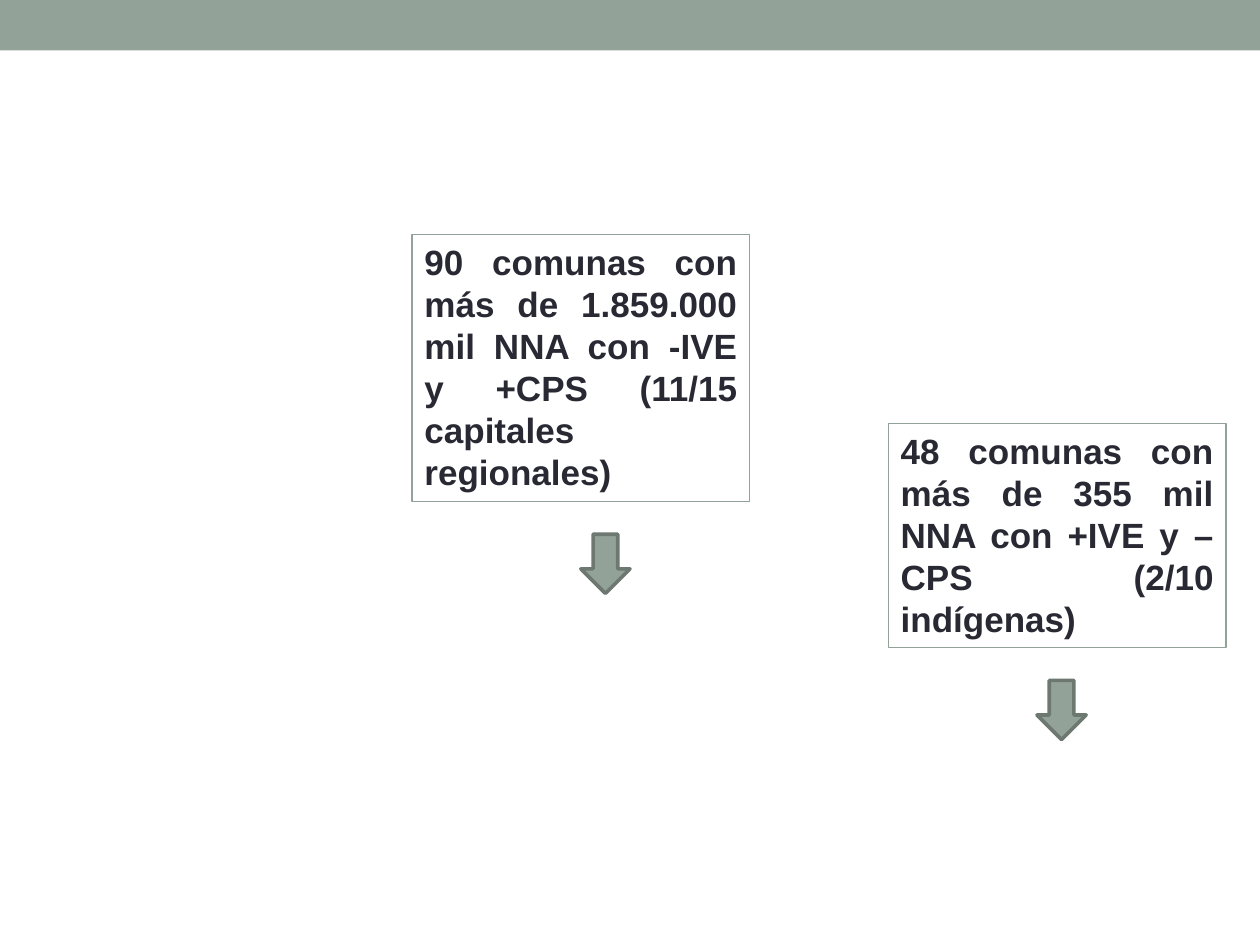
from pptx import Presentation
from pptx.dml.color import RGBColor
from pptx.enum.shapes import MSO_SHAPE
from pptx.enum.text import MSO_ANCHOR, MSO_AUTO_SIZE, PP_ALIGN
from pptx.util import Inches, Pt

SAGE, EDGE, INK = "93A299", "6D7871", "292934"
FRAME = {"word_wrap": True, "auto_size": MSO_AUTO_SIZE.SHAPE_TO_FIT_TEXT,
         "vertical_anchor": MSO_ANCHOR.TOP}
FONT = {"name": "Arial", "size": Pt(20), "bold": True}
NOTES = [
    ((7.05, 3.36, 2.68, 1.78), 1.18,
     "48 comunas con más de 355 mil NNA con +IVE y –CPS (2/10 indígenas)"),
    ((3.27, 1.86, 2.68, 2.12), 1.34,
     "90 comunas con más de 1.859.000 mil NNA con -IVE y +CPS "
     "(11/15 capitales regionales)"),
]


def paint(target, color):
    target.rgb = RGBColor.from_string(color)


def style(target, values):
    for name, value in values.items():
        setattr(target, name, value)


def draw(slide, kind, box, fill=None, line=None, width=0):
    shape = slide.shapes.add_shape(kind, *map(Inches, box))
    shape.shadow.inherit = False
    if fill:
        shape.fill.solid()
        paint(shape.fill.fore_color, fill)
    else:
        shape.fill.background()
    if line:
        paint(shape.line.color, line)
        shape.line.width = Pt(width)
    else:
        shape.line.fill.background()
    return shape


def add_band(slide, box):
    draw(slide, MSO_SHAPE.RECTANGLE, box, SAGE)


def add_note(slide, box, shift, text):
    left, top, width, height = box
    frame = draw(slide, MSO_SHAPE.RECTANGLE, box, line=SAGE, width=0.75).text_frame
    style(frame, FRAME)
    para = frame.paragraphs[0]
    para.alignment = PP_ALIGN.JUSTIFY
    run = para.add_run()
    run.text = text
    style(run.font, FONT)
    paint(run.font.color, INK)
    arrow = (left + shift, top + height + 0.26, 0.39, 0.47)
    draw(slide, MSO_SHAPE.DOWN_ARROW, arrow, SAGE, EDGE, 2.08)


def main():
    deck = Presentation()
    style(deck, {"slide_width": Inches(10), "slide_height": Inches(7.5)})
    slide = deck.slides.add_slide(deck.slide_layouts[6])
    add_band(slide, (0, 0, 10, 0.4))
    for note in NOTES:
        add_note(slide, *note)
    deck.save("out.pptx")


if __name__ == "__main__":
    main()
